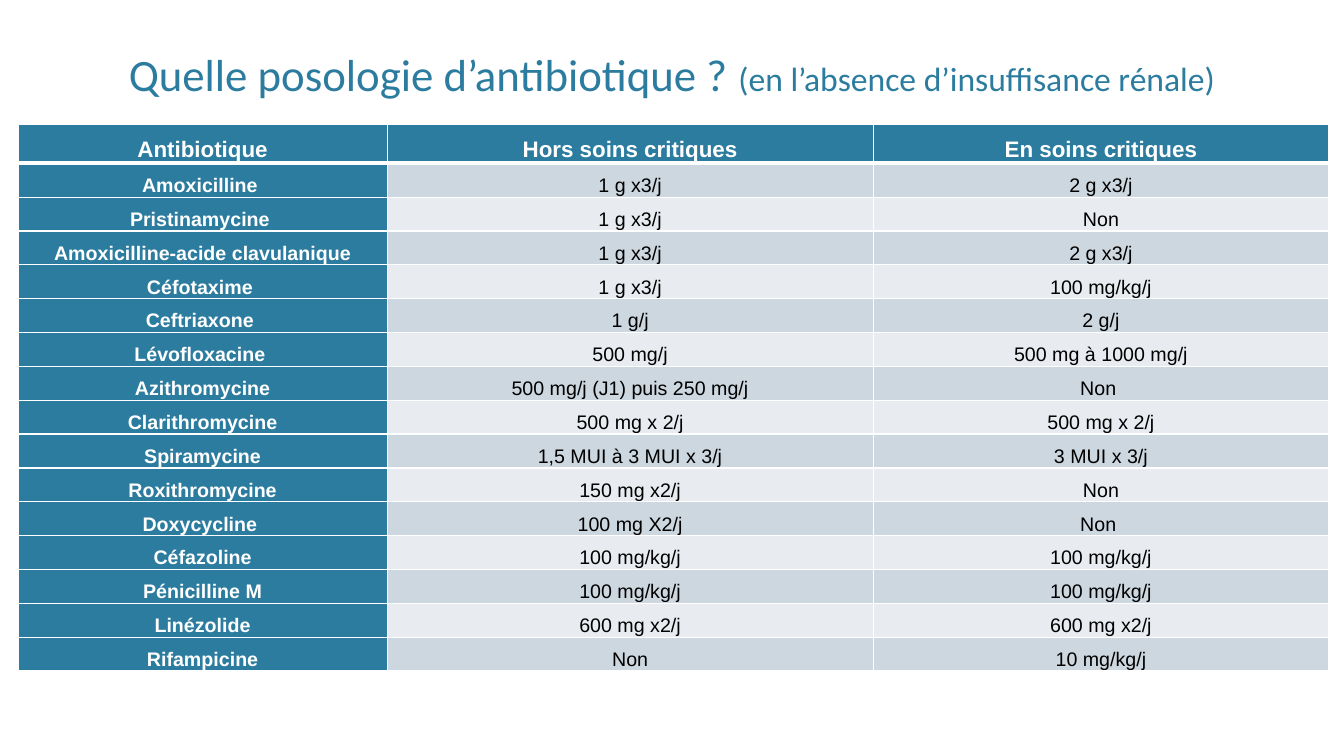
from lxml.etree import SubElement
from pptx import Presentation
from pptx.dml.color import RGBColor
from pptx.enum.text import MSO_ANCHOR, PP_ALIGN
from pptx.oxml.ns import qn
from pptx.util import Inches, Pt

TITLE = [("Quelle posologie d’antibiotique ? ", 32), ("(en l’absence d’insuffisance rénale)", 24)]
DOSAGES = [
    ("Antibiotique", "Hors soins critiques", "En soins critiques"),
    ("Amoxicilline ", "1 g x3/j", "2 g x3/j"),
    ("Pristinamycine ", "1 g x3/j", "Non"),
    ("Amoxicilline-acide clavulanique", "1 g x3/j", "2 g x3/j"),
    ("Céfotaxime ", "1 g x3/j", "100 mg/kg/j"),
    ("Ceftriaxone ", "1 g/j", "2 g/j"),
    ("Lévofloxacine ", "500 mg/j", "500 mg à 1000 mg/j"),
    ("Azithromycine", "500 mg/j (J1) puis 250 mg/j", "Non "),
    ("Clarithromycine", "500 mg x 2/j", "500 mg x 2/j"),
    ("Spiramycine", "1,5 MUI à 3 MUI x 3/j", "3 MUI x 3/j"),
    ("Roxithromycine", "150 mg x2/j", "Non"),
    ("Doxycycline ", "100 mg X2/j", "Non "),
    ("Céfazoline", "100 mg/kg/j", "100 mg/kg/j"),
    ("Pénicilline M", "100 mg/kg/j", "100 mg/kg/j"),
    ("Linézolide", "600 mg x2/j", "600 mg x2/j"),
    ("Rifampicine", "Non", "10 mg/kg/j"),
]
COLORS = {"teal": "2C7C9F", "odd": "CDD7DF", "even": "E8ECF0", "white": "FFFFFF", "black": "000000"}
COLUMN_WIDTHS = (3.66, 4.82, 4.52)
TABLE_LEFT, TABLE_TOP, TABLE_HEIGHT, HEADER_HEIGHT = 0.18, 1.23, 5.43, 0.39
ROW_HEIGHT = (TABLE_HEIGHT - HEADER_HEIGHT) / (len(DOSAGES) - 1)


def add_run(paragraph, wording, font_name, size, color, bold=False):
    run = paragraph.add_run()
    run.text = wording
    run.font.name, run.font.size, run.font.bold = font_name, Pt(size), bold
    run.font.color.rgb = RGBColor.from_string(COLORS[color])


def add_borders(cell, widths):
    properties = cell._tc.get_or_add_tcPr()
    for side, width in widths.items():
        border = SubElement(properties, qn(f"a:ln{side}"), w=str(Pt(width)))
        SubElement(SubElement(border, qn("a:solidFill")), qn("a:srgbClr"), val=COLORS["white"])


def fill_cell(cell, wording, row, column):
    heading = row == 0 or column == 0
    add_borders(cell, {"L": 1, "R": 1, "T": 3 if row == 1 else 1, "B": 3 if row == 0 else 1})
    cell.fill.solid()
    shade = "teal" if heading else "odd" if row % 2 else "even"
    cell.fill.fore_color.rgb = RGBColor.from_string(COLORS[shade])
    cell.margin_left = cell.margin_right = Inches(0.07)
    cell.margin_top = cell.margin_bottom = 0
    cell.vertical_anchor = MSO_ANCHOR.MIDDLE
    paragraph = cell.text_frame.paragraphs[0]
    paragraph.alignment, paragraph.line_spacing = PP_ALIGN.CENTER, 1.5
    add_run(paragraph, wording, "Arial", 14 if row else 16, "white" if heading else "black", heading)


def main():
    deck = Presentation()
    deck.slide_width, deck.slide_height = Inches(13.33), Inches(7.5)
    slide = deck.slides.add_slide(deck.slide_layouts[5])

    title = slide.shapes.title
    title.left, title.top, title.width, title.height = map(Inches, (0.8, 0.22, 11.73, 0.83))
    title.text_frame.vertical_anchor = MSO_ANCHOR.BOTTOM
    title_line = title.text_frame.paragraphs[0]
    title_line.alignment = PP_ALIGN.CENTER
    for wording, size in TITLE:
        add_run(title_line, wording, "Calibri", size, "teal")

    dosage_table = slide.shapes.add_table(
        len(DOSAGES), len(COLUMN_WIDTHS), Inches(TABLE_LEFT), Inches(TABLE_TOP),
        Inches(sum(COLUMN_WIDTHS)), Inches(TABLE_HEIGHT)).table
    dosage_table.first_col = True
    for column, width in enumerate(COLUMN_WIDTHS):
        dosage_table.columns[column].width = Inches(width)
    for row, dosages in enumerate(DOSAGES):
        dosage_table.rows[row].height = Inches(ROW_HEIGHT if row else HEADER_HEIGHT)
        for column, wording in enumerate(dosages):
            fill_cell(dosage_table.cell(row, column), wording, row, column)

    deck.save("out.pptx")


if __name__ == "__main__":
    main()
